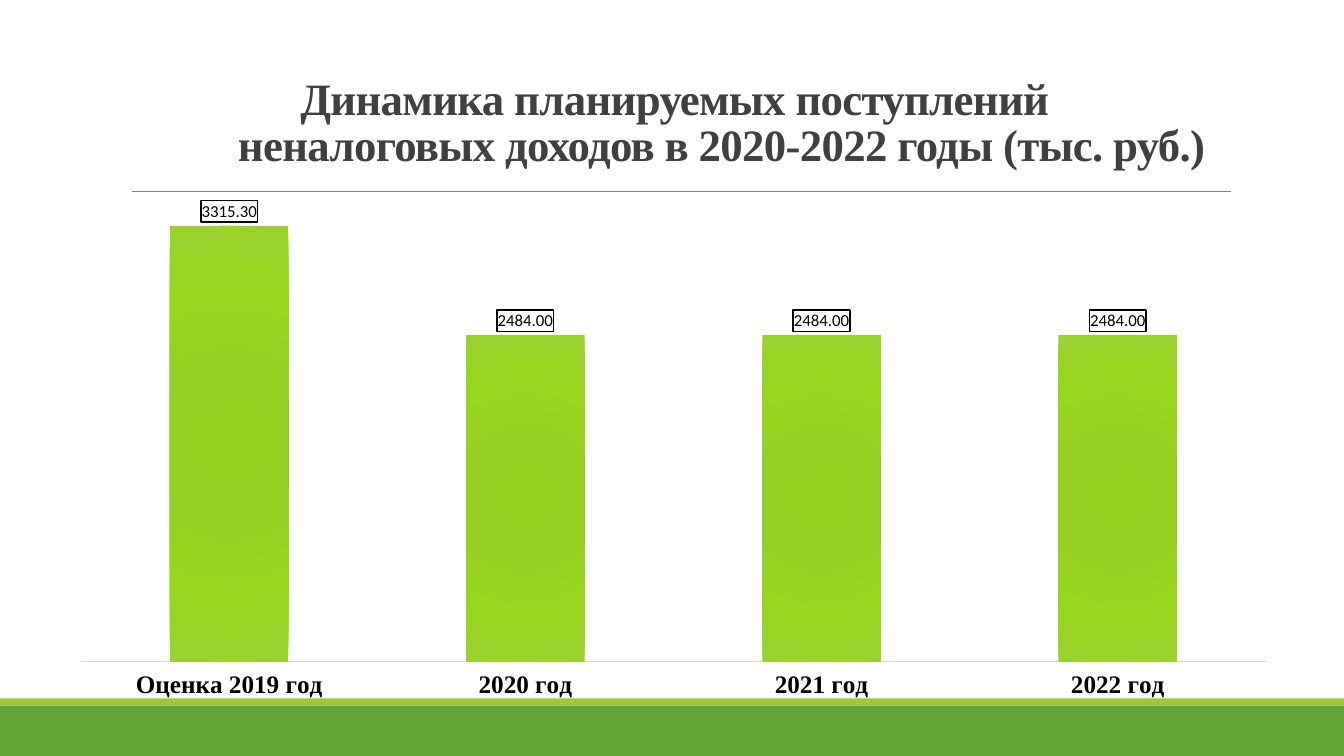
from pptx import Presentation
from pptx.chart.data import CategoryChartData
from pptx.dml.color import RGBColor
from pptx.enum.chart import XL_CHART_TYPE as ChartType, XL_LABEL_POSITION as LabelPosition
from pptx.enum.chart import XL_TICK_LABEL_POSITION as TickLabels, XL_TICK_MARK as TickMark
from pptx.enum.shapes import MSO_CONNECTOR as Connector, MSO_SHAPE as Shape
from pptx.enum.text import MSO_ANCHOR as Anchor, PP_ALIGN as Align
from pptx.oxml import parse_xml
from pptx.oxml.ns import nsdecls
from pptx.util import Inches, Pt
from lxml import etree

GREEN = RGBColor(0x63, 0xA5, 0x37)
LIME = RGBColor(0x99, 0xCB, 0x38)
RULE_GRAY = RGBColor(0x80, 0x80, 0x80)
TITLE_GRAY = RGBColor(0x40, 0x40, 0x40)
AXIS_GRAY = RGBColor(0xD9, 0xD9, 0xD9)
BLACK = RGBColor(0, 0, 0)
WHITE = RGBColor(0xFF, 0xFF, 0xFF)
BAR_STOPS = [
    (0, RGBColor(0x95, 0xD2, 0x20)),
    (34, RGBColor(0x96, 0xD0, 0x23)),
    (70, RGBColor(0x99, 0xD7, 0x20)),
    (100, RGBColor(0x9B, 0xD2, 0x31)),
]
SERIF = "Times New Roman"
SANS = "Calibri"
TITLE_LINES = [
    ("Динамика планируемых поступлений", 0),
    ("неналоговых доходов в 2020-2022 годы (тыс. руб.)", 0.93),
]
INCOME = {
    "Оценка 2019 год": 3315.3,
    "2020 год": 2484,
    "2021 год": 2484,
    "2022 год": 2484,
}


def set_font(font, name, size, color, bold=False):
    font.name = name
    font.size = Pt(size)
    font.bold = bold
    font.color.rgb = color


def add_footer(page, left, top, width, height):
    stripe = 0.07
    for y, depth, color in [(top + stripe, height - stripe, GREEN), (top, stripe, LIME)]:
        band = page.shapes.add_shape(
            Shape.RECTANGLE, Inches(left), Inches(y), Inches(width), Inches(depth))
        band.shadow.inherit = False
        band.fill.solid()
        band.fill.fore_color.rgb = color
        band.line.fill.background()


def add_title(page, left, top, width, height):
    box = page.shapes.add_textbox(Inches(left), Inches(top), Inches(width), Inches(height))
    frame = box.text_frame
    frame.word_wrap = True
    frame.vertical_anchor = Anchor.BOTTOM
    for index, (text, indent) in enumerate(TITLE_LINES):
        para = frame.add_paragraph() if index else frame.paragraphs[0]
        para.alignment = Align.CENTER
        para.line_spacing = 0.85
        para._p.get_or_add_pPr().set("marL", str(Inches(indent)))
        span = para.add_run()
        span.text = text
        set_font(span.font, SERIF, 32, TITLE_GRAY, True)
        span._r.get_or_add_rPr().set("spc", "-50")

    rule_y = Inches(top + height + 0.16)
    rule = page.shapes.add_connector(
        Connector.STRAIGHT, Inches(left + 0.12), rule_y, Inches(left + width + 0.02), rule_y)
    rule.line.color.rgb = RULE_GRAY
    rule.line.width = Pt(0.5)
    etree.SubElement(rule._element.spPr, "{http://schemas.openxmlformats.org/drawingml/2006/main}effectLst")


def fill_bars(series):
    series.format.fill.solid()
    solid = series._element.spPr.find("{*}solidFill")
    stops = "".join(
        f'<a:gs pos="{percent * 1000}"><a:srgbClr val="{color}"/></a:gs>'
        for percent, color in BAR_STOPS)
    gradient = parse_xml(
        f'<a:gradFill {nsdecls("a")} rotWithShape="1"><a:gsLst>{stops}</a:gsLst>'
        '<a:path path="circle"><a:fillToRect l="50000" t="50000" r="50000" b="50000"/>'
        '</a:path></a:gradFill>')
    solid.getparent().replace(solid, gradient)


def label_bars(series):
    labels = series.data_labels
    labels.show_value = True
    labels.position = LabelPosition.OUTSIDE_END
    labels.number_format = "0.00"
    labels.number_format_is_linked = False
    set_font(labels.font, SANS, 12, BLACK)
    frame = parse_xml(
        f'<c:spPr {nsdecls("c", "a")}>'
        f'<a:solidFill><a:srgbClr val="{WHITE}"/></a:solidFill>'
        f'<a:ln w="{Pt(1)}"><a:solidFill><a:srgbClr val="{BLACK}"/></a:solidFill></a:ln>'
        '</c:spPr>')
    labels._element.find("{*}numFmt").addnext(frame)


def place_plot(chart, x, y, width, height):
    area = chart._chartSpace.chart.plotArea
    for old in area.findall("{*}layout"):
        area.remove(old)
    sizes = "".join(
        f'<c:{name} val="{value}"/>'
        for name, value in [("x", x), ("y", y), ("w", width), ("h", height)])
    area.insert(0, parse_xml(
        f'<c:layout {nsdecls("c")}><c:manualLayout><c:layoutTarget val="inner"/>'
        f'<c:xMode val="edge"/><c:yMode val="edge"/>{sizes}</c:manualLayout></c:layout>'))


def add_income_chart(page, left, top, width, height):
    data = CategoryChartData(number_format="0.00")
    data.categories = list(INCOME)
    data.add_series("Series 1", list(INCOME.values()))
    chart = page.shapes.add_chart(
        ChartType.COLUMN_CLUSTERED, Inches(left), Inches(top),
        Inches(width), Inches(height), data).chart
    chart.has_legend = False
    chart.has_title = False
    set_font(chart.font, SANS, 10, BLACK)

    years = chart.category_axis
    years.major_tick_mark = TickMark.NONE
    years.tick_label_position = TickLabels.LOW
    years.format.line.color.rgb = AXIS_GRAY
    years.format.line.width = Pt(1)
    set_font(years.tick_labels.font, SERIF, 18, BLACK, True)

    amounts = chart.value_axis
    amounts.minimum_scale = 0
    amounts.maximum_scale = 3500
    amounts.has_major_gridlines = False
    amounts.visible = False

    plot = chart.plots[0]
    plot.gap_width = 150
    plot.vary_by_categories = False
    fill_bars(plot.series[0])
    label_bars(plot.series[0])
    place_plot(chart, 0.02, 0.02, 0.96, 0.9)


def main():
    deck = Presentation()
    deck.slide_width = Inches(13.33)
    deck.slide_height = Inches(7.5)
    page = deck.slides.add_slide(deck.slide_layouts[6])
    add_footer(page, 0, 6.93, 13.33, 0.57)
    add_title(page, 1.19, 0.15, 11, 1.59)
    add_income_chart(page, 0.56, 1.9, 12.24, 5.07)
    deck.save("out.pptx")


if __name__ == "__main__":
    main()
